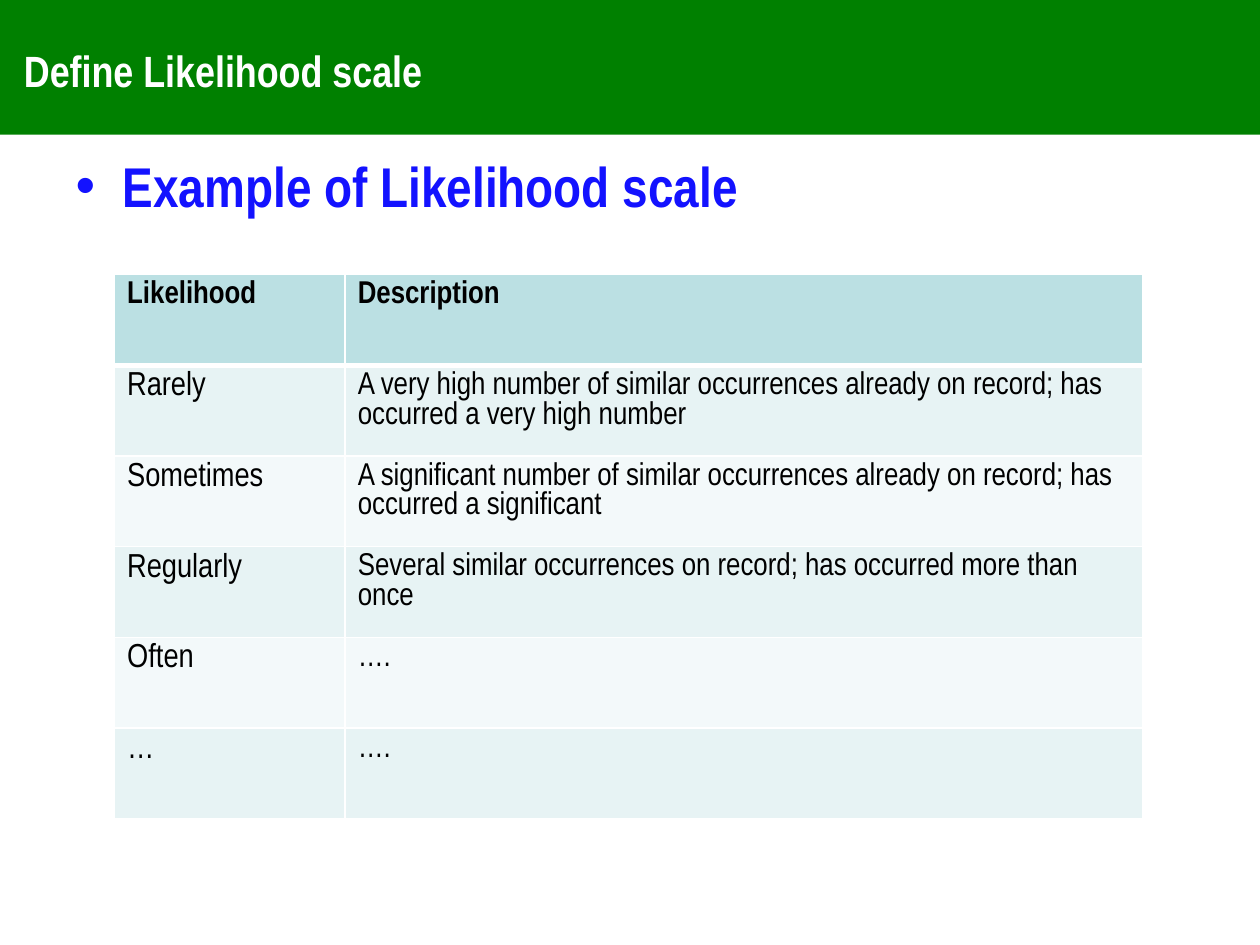
from lxml.etree import SubElement
from pptx import Presentation
from pptx.dml.color import RGBColor
from pptx.enum.shapes import MSO_SHAPE
from pptx.enum.text import MSO_ANCHOR, MSO_AUTO_SIZE, PP_ALIGN
from pptx.oxml.ns import qn
from pptx.util import Inches, Pt

FACE = "Arial Narrow"
HUES = {
    "band": "008000",
    "white": "FFFFFF",
    "lead": "1312FF",
    "text": "000000",
    "head": "BBE0E3",
    "odd": "E7F3F4",
    "even": "F3F9FA",
}
ROWS = [
    ("Likelihood", "Description"),
    ("Rarely", "A very high number of similar occurrences already on record; "
               "has occurred a very high number"),
    ("Sometimes", "A significant number of similar occurrences already on record; "
                  "has occurred a significant"),
    ("Regularly", "Several similar occurrences on record; has occurred more than once"),
    ("Often", "…."),
    ("…", "…."),
]


def hue(name):
    return RGBColor.from_string(HUES[name])


def style(para, size, color, bold):
    para.alignment = PP_ALIGN.LEFT
    font = para.font
    font.name = FACE
    font.size = Pt(size)
    font.bold = bold
    font.color.rgb = hue(color)


def place(shape, box):
    shape.left, shape.top, shape.width, shape.height = map(Inches, box)


def fill_holder(holder, box, text, size, color, anchor):
    place(holder, box)
    frame = holder.text_frame
    frame.text = text
    frame.auto_size = MSO_AUTO_SIZE.NONE
    frame.vertical_anchor = anchor
    style(frame.paragraphs[0], size, color, True)


def add_header(slide, box):
    left, top, width, height = box
    band = slide.shapes.add_shape(MSO_SHAPE.RECTANGLE, *map(Inches, box))
    band.shadow.inherit = False
    band.fill.solid()
    band.fill.fore_color.rgb = hue("band")
    band.line.fill.background()
    title = slide.shapes.title
    title.element.addprevious(band.element)
    fill_holder(title, (left + 0.09, top + 0.24, width - 1, 0.69),
                "Define Likelihood scale", 25, "white", MSO_ANCHOR.MIDDLE)


def add_lead(slide, box):
    fill_holder(slide.placeholders[1], box, "Example of Likelihood scale",
                32, "lead", MSO_ANCHOR.TOP)


def add_edges(cell, head):
    props = cell._tc.get_or_add_tcPr()
    for side in "LRTB":
        points = 3 if head and side == "B" else 1
        line = SubElement(props, qn(f"a:ln{side}"), w=str(Pt(points)))
        paint = SubElement(line, qn("a:solidFill"))
        SubElement(paint, qn("a:srgbClr"), val=HUES["white"])


def add_scale(slide, box):
    left, top, width, height = box
    table = slide.shapes.add_table(len(ROWS), 2, *map(Inches, box)).table
    first = 1.83
    table.columns[0].width = Inches(first)
    table.columns[1].width = Inches(width - first)
    for r, texts in enumerate(ROWS):
        table.rows[r].height = Inches(height / len(ROWS))
        head = r == 0
        shade = "head" if head else "odd" if r % 2 else "even"
        for c, text in enumerate(texts):
            cell = table.cell(r, c)
            add_edges(cell, head)
            cell.fill.solid()
            cell.fill.fore_color.rgb = hue(shade)
            cell.text = text
            size = 19 if c == 0 and not head else 18
            style(cell.text_frame.paragraphs[0], size, "text", head)


def main():
    deck = Presentation()
    deck.slide_width, deck.slide_height = Inches(10), Inches(7.5)
    slide = deck.slides.add_slide(deck.slide_layouts[1])
    add_header(slide, (0, -0.03, 10, 1.1))
    add_lead(slide, (0.5, 1.15, 9, 5.55))
    add_scale(slide, (0.91, 2.18, 8.16, 4.32))
    deck.save("out.pptx")


if __name__ == "__main__":
    main()
